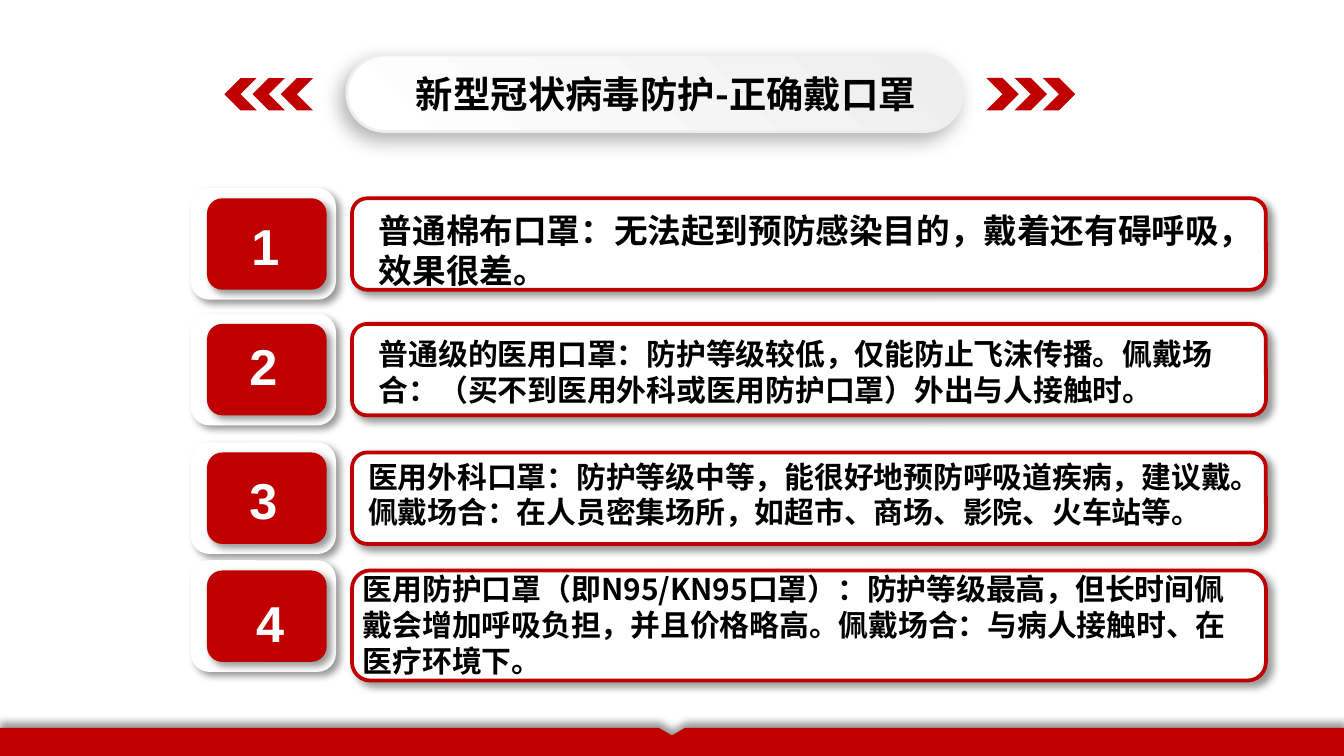
import pptx
import pptx.util
import pptx.dml.color
import pptx.enum.shapes
import pptx.enum.text
import pptx.oxml
import pptx.oxml.ns

Pt = pptx.util.Pt
RGBColor = pptx.dml.color.RGBColor
MSO_SHAPE = pptx.enum.shapes.MSO_SHAPE
PP_ALIGN = pptx.enum.text.PP_ALIGN
MSO_ANCHOR = pptx.enum.text.MSO_ANCHOR
MSO_AUTO_SIZE = pptx.enum.text.MSO_AUTO_SIZE

RED = RGBColor(0xC0, 0x00, 0x00)
WHITE = RGBColor(0xFF, 0xFF, 0xFF)
BLACK = RGBColor(0x00, 0x00, 0x00)
PALE_GRAY = RGBColor(0xEE, 0xEE, 0xEE)


def finish(shape, fill, border=None, shadow=None):
    """Set fill, border (colour, width) and shadow (alpha %, blur, distance, angle)."""
    shape.shadow.inherit = False
    if fill is not None:
        shape.fill.solid()
        shape.fill.fore_color.rgb = fill
    if border:
        shape.line.color.rgb, shape.line.width = border[0], Pt(border[1])
    else:
        shape.line.fill.background()
    if shadow:
        alpha, blur, distance, angle = shadow
        effects = shape.element.spPr.find(pptx.oxml.ns.qn("a:effectLst"))
        effects.append(pptx.oxml.parse_xml(
            f'<a:outerShdw {pptx.oxml.ns.nsdecls("a")} blurRad="{Pt(blur)}" dist="{Pt(distance)}"'
            f' dir="{angle * 60000}" algn="ctr" rotWithShape="0">'
            f'<a:srgbClr val="000000"><a:alpha val="{alpha * 1000}"/></a:srgbClr></a:outerShdw>'))


def write(box, text, font_name, size, color, align, margins):
    """Fill a box with one bold paragraph, using the font for Chinese as well."""
    frame = box.text_frame
    frame.word_wrap = True
    frame.auto_size = MSO_AUTO_SIZE.NONE
    frame.vertical_anchor = MSO_ANCHOR.TOP
    frame.margin_left = frame.margin_right = Pt(margins[0])
    frame.margin_top = frame.margin_bottom = Pt(margins[1])
    frame.text = text
    paragraph = frame.paragraphs[0]
    paragraph.alignment = align
    font = paragraph.font
    font.name, font.size, font.bold = font_name, Pt(size), True
    font.color.rgb = color
    latin = paragraph._p.pPr.find(".//" + pptx.oxml.ns.qn("a:latin"))
    latin.addnext(pptx.oxml.parse_xml(
        f'<a:ea {pptx.oxml.ns.nsdecls("a")} typeface="{font_name}"/>'))


prs = pptx.Presentation()
prs.slide_width, prs.slide_height = Pt(720), Pt(405)
slide = prs.slides.add_slide(prs.slide_layouts[5])
shapes = slide.shapes

# Footer band with a notch in the middle
builder = shapes.build_freeform(0, 390, scale=Pt(1))
builder.add_line_segments(
    [(353, 390), (360, 393.8), (367, 390), (720, 390), (720, 406.8), (0, 406.8)])
finish(builder.convert_to_shape(), RED, shadow=(40, 4, 3, 270))
footer = shapes.add_shape(MSO_SHAPE.RECTANGLE, 0, Pt(394.6), Pt(720), Pt(14.4))
finish(footer, RED)

# Title pill with chevrons on both sides
pill = shapes.add_shape(
    MSO_SHAPE.ROUNDED_RECTANGLE, Pt(185.8), Pt(29.5), Pt(329.8), Pt(41))
pill.adjustments[0] = 0.5
pill.fill.gradient()
pill.fill.gradient_angle = 225
for stop, color in zip(pill.fill.gradient_stops, (PALE_GRAY, WHITE)):
    stop.color.rgb = color
finish(pill, None, border=(PALE_GRAY, 1.5), shadow=(30, 10, 5, 135))

for first_left, rotation in ((120.2, 180), (528.5, 0)):
    for i in range(3):
        chevron = shapes.add_shape(
            MSO_SHAPE.CHEVRON, Pt(first_left + 15.1 * i), Pt(41.8), Pt(17.3), Pt(17.3))
        chevron.rotation = rotation
        finish(chevron, RED)

title = shapes.title
title.left, title.top, title.width, title.height = Pt(203.8), Pt(36), Pt(306), Pt(28)
write(title, "新型冠状病毒防护-正确戴口罩", "Noto Sans CJK JP", 20, BLACK,
      PP_ALIGN.CENTER, (4.3, 2.2))
title.element.getparent().append(title.element)  # bring in front of the pill

# Rows: top, card height, number centre and top, advice left, top, width and size, advice
rows = [
    (100.8, 49, 142.2, 112.3, 198, 109.4, 466, 18,
     "普通棉布口罩：无法起到预防感染目的，戴着还有碍呼吸，效果很差。"),
    (168.1, 49, 141.1, 176.4, 198, 177.1, 466, 16,
     "普通级的医用口罩：防护等级较低，仅能防止飞沫传播。佩戴场合："
     "（买不到医用外科或医用防护口罩）外出与人接触时。"),
    (237, 49, 141.1, 248.4, 192.2, 242.6, 487.4, 16,
     "医用外科口罩：防护等级中等，能很好地预防呼吸道疾病，建议戴。"
     "佩戴场合：在人员密集场所，如超市、商场、影院、火车站等。"),
    (300.2, 59, 144.7, 314.6, 189.4, 303.1, 476.6, 16,
     "医用防护口罩（即N95/KN95口罩）：防护等级最高，但长时间佩戴会增加呼吸负担，"
     "并且价格略高。佩戴场合：与病人接触时、在医疗环境下。"),
]
ROW_SHADOW = (40, 4, 3, 45)
INSETS = (5, 2.9)

for number, row in enumerate(rows, start=1):
    (top, card_height, number_center, number_top,
     advice_left, advice_top, advice_width, size, advice) = row
    parts = [
        (102.2, top, 77.8, 59.8, WHITE, None),
        (110.9, top + 5.4, 64.1, 49, RED, None),
        (188.6, top + 5.4, 489.6, card_height, WHITE, (RED, 2)),
    ]
    for left, part_top, width, height, fill, border in parts:
        part = shapes.add_shape(
            MSO_SHAPE.ROUNDED_RECTANGLE, Pt(left), Pt(part_top), Pt(width), Pt(height))
        finish(part, fill, border, ROW_SHADOW)

    advice_box = shapes.add_textbox(
        Pt(advice_left), Pt(advice_top), Pt(advice_width), Pt(55.4 if number > 1 else 44.6))
    write(advice_box, advice, "Noto Sans CJK SC", size, BLACK, PP_ALIGN.LEFT, INSETS)
    number_box = shapes.add_textbox(
        Pt(number_center - 29), Pt(number_top), Pt(58), Pt(38.2))
    write(number_box, str(number), "Arial", 27, WHITE, PP_ALIGN.CENTER, INSETS)

prs.save("out.pptx")
